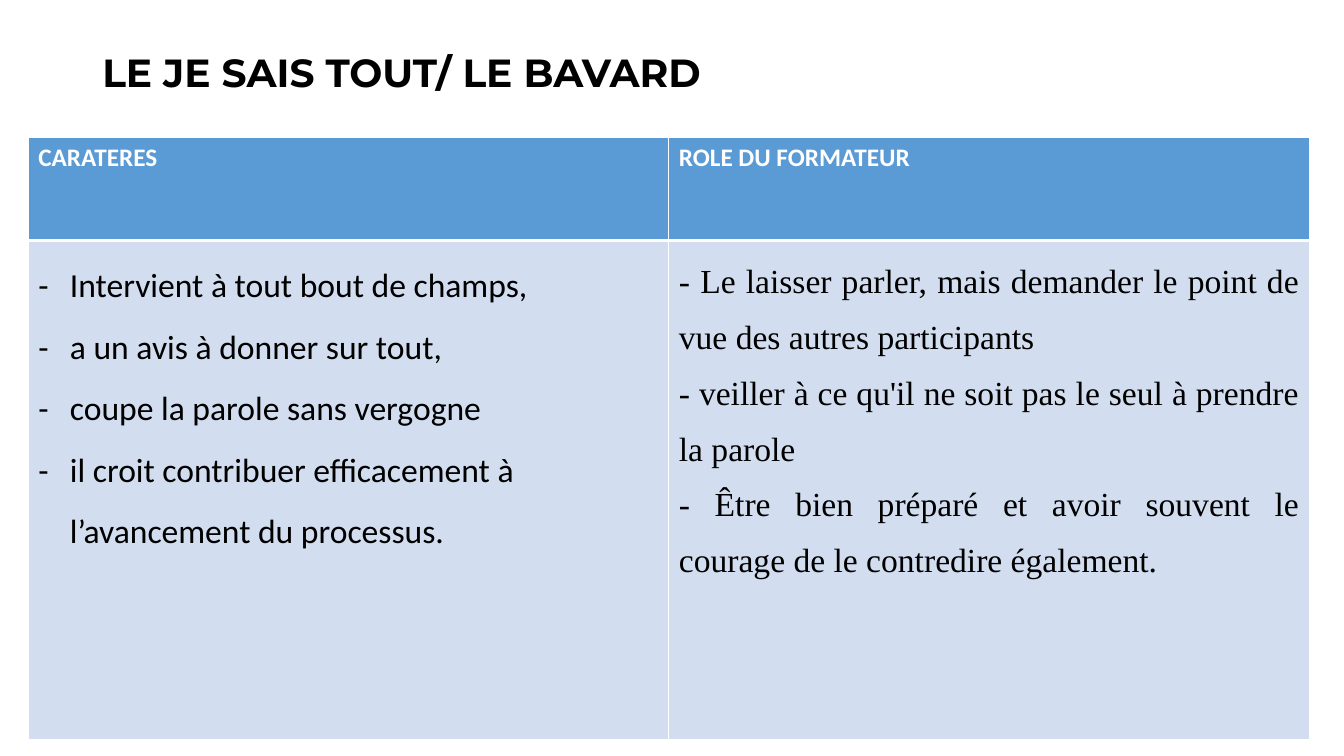
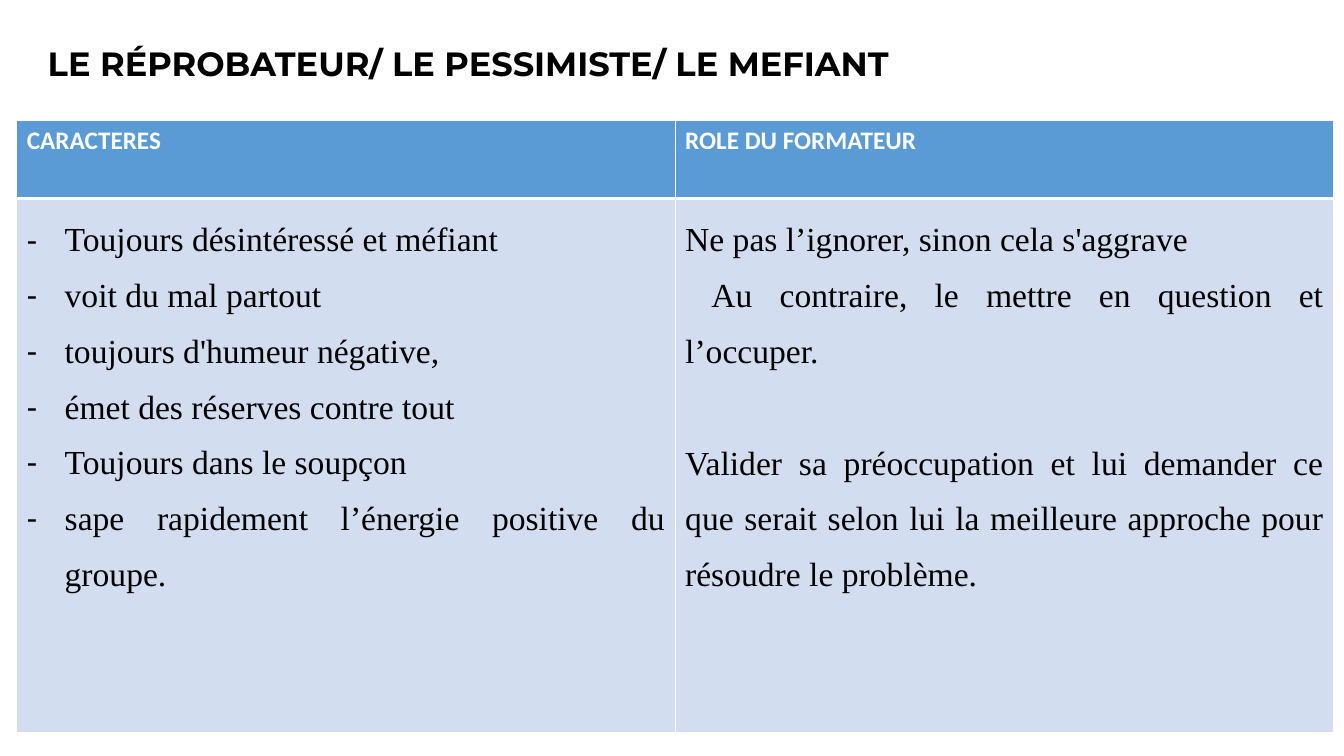
from lxml import etree
from pptx import Presentation
from pptx.dml.color import RGBColor
from pptx.enum.text import MSO_ANCHOR, PP_ALIGN
from pptx.oxml.ns import qn
from pptx.util import Emu, Pt

MIDDLE = MSO_ANCHOR.MIDDLE
LEFT, JUSTIFY = PP_ALIGN.LEFT, PP_ALIGN.JUSTIFY

BLACK, WHITE = "000000", "FFFFFF"
HEADER_BLUE, BODY_BLUE = "5B9BD5", "D2DEEF"
SANS, SERIF = "Calibri", "Times New Roman"

TITLE_FONT = {"name": "Montserrat", "bold": True}
HEADER_FONT = {"name": SANS, "size": Pt(18), "bold": True}
BODY_FONT = {"size": Pt(24), "bold": False}
THIN, THICK = 1, 3


def px(length):
    return Emu(length * 9525)


def rgb(color):
    return RGBColor.from_string(color)


def write_paragraph(para, text, font, color, layout):
    for name, value in layout.items():
        setattr(para, name, value)
    span = para.add_run()
    span.text = text
    for name, value in font.items():
        setattr(span.font, name, value)
    span.font.color.rgb = rgb(color)


def indent_paragraph(para, left, first_line):
    properties = para._p.get_or_add_pPr()
    properties.set("marL", str(px(left)))
    properties.set("indent", str(px(first_line)))
    return properties


def add_dash(para, hang):
    properties = indent_paragraph(para, hang, -hang)
    etree.SubElement(properties, qn("a:buFont"), typeface=SANS)
    etree.SubElement(properties, qn("a:buChar"), char="-")


def add_title(page, text, place, size, bottom_inset=5):
    box = page.shapes.add_textbox(*map(px, place))
    frame = box.text_frame
    frame.word_wrap = True
    frame.vertical_anchor = MIDDLE
    frame.margin_bottom = px(bottom_inset)
    font = {**TITLE_FONT, "size": Pt(size)}
    write_paragraph(frame.paragraphs[0], text, font, BLACK, {"line_spacing": 0.9})


def style_cell(cell, color, top, bottom):
    properties = cell._tc.get_or_add_tcPr()
    for side, width in {"L": THIN, "R": THIN, "T": top, "B": bottom}.items():
        line = etree.SubElement(properties, qn(f"a:ln{side}"), w=str(Pt(width)))
        fill = etree.SubElement(line, qn("a:solidFill"))
        etree.SubElement(fill, qn("a:srgbClr"), val=WHITE)
    cell.fill.solid()
    cell.fill.fore_color.rgb = rgb(color)


def add_columns(page, left, top, column_width, row_heights, columns):
    frame = page.shapes.add_table(
        2, len(columns), px(left), px(top),
        px(column_width * len(columns)), px(sum(row_heights)))
    table = frame.table
    for row, height in zip(table.rows, row_heights):
        row.height = px(height)
    for index, column in enumerate(columns):
        table.columns[index].width = px(column_width)
        header, body = table.cell(0, index), table.cell(1, index)
        style_cell(header, HEADER_BLUE, THIN, THICK)
        style_cell(body, BODY_BLUE, THICK, THIN)
        write_paragraph(header.text_frame.paragraphs[0], column["header"],
                        HEADER_FONT, WHITE, {})
        fill_body(body.text_frame, **column)


def fill_body(frame, header, lines, font=SERIF, align=JUSTIFY, hang=0,
              first_lines=None, gaps=None):
    for index, text in enumerate(lines):
        para = frame.add_paragraph() if index else frame.paragraphs[0]
        if hang:
            add_dash(para, hang)
        elif first_lines and index in first_lines:
            indent_paragraph(para, 0, first_lines[index])
        layout = {"alignment": align, "line_spacing": 1.5}
        if gaps and index in gaps:
            layout["space_before"] = Pt(gaps[index])
        write_paragraph(para, text, {**BODY_FONT, "name": font}, BLACK, layout)


def build_talker(page):
    add_title(page, "LE JE SAIS TOUT/ LE BAVARD", (88, 38, 1104, 139), 28,
              bottom_inset=78)
    add_columns(page, 27, 131, 610, (98, 475), [
        {"header": "CARATERES", "font": SANS, "align": LEFT, "hang": 30,
         "lines": [
             "Intervient à tout bout de champs,",
             "a un avis à donner sur tout,",
             "coupe la parole sans vergogne",
             "il croit contribuer efficacement à l’avancement du processus.",
         ]},
        {"header": "ROLE DU FORMATEUR",
         "lines": [
             "- Le laisser parler, mais demander le point de vue des autres participants",
             "- veiller à ce qu'il ne soit pas le seul à prendre la parole",
             "- Être bien préparé et avoir souvent le courage de le contredire également.",
         ]},
    ])


def build_pessimist(page):
    add_title(page, "LE RÉPROBATEUR/ LE PESSIMISTE/ LE MEFIANT",
              (36, 10, 1193, 105), 24)
    add_columns(page, 16, 115, 627, (74, 509), [
        {"header": "CARACTERES", "hang": 36,
         "lines": [
             "Toujours désintéressé et méfiant",
             "voit du mal partout",
             "toujours d'humeur négative,",
             "émet des réserves contre tout",
             "Toujours dans le soupçon",
             "sape rapidement l’énergie positive du groupe.",
         ]},
        {"header": "ROLE DU FORMATEUR", "first_lines": {1: 25}, "gaps": {2: 40},
         "lines": [
             "Ne pas l’ignorer, sinon cela s'aggrave",
             "Au contraire, le mettre en question et l’occuper.",
             "Valider sa préoccupation et lui demander ce que serait selon lui "
             "la meilleure approche pour résoudre le problème.",
         ]},
    ])


def main():
    deck = Presentation()
    deck.slide_width, deck.slide_height = px(1280), px(720)
    for build in (build_talker, build_pessimist):
        build(deck.slides.add_slide(deck.slide_layouts[6]))
    deck.save("out.pptx")


if __name__ == "__main__":
    main()
